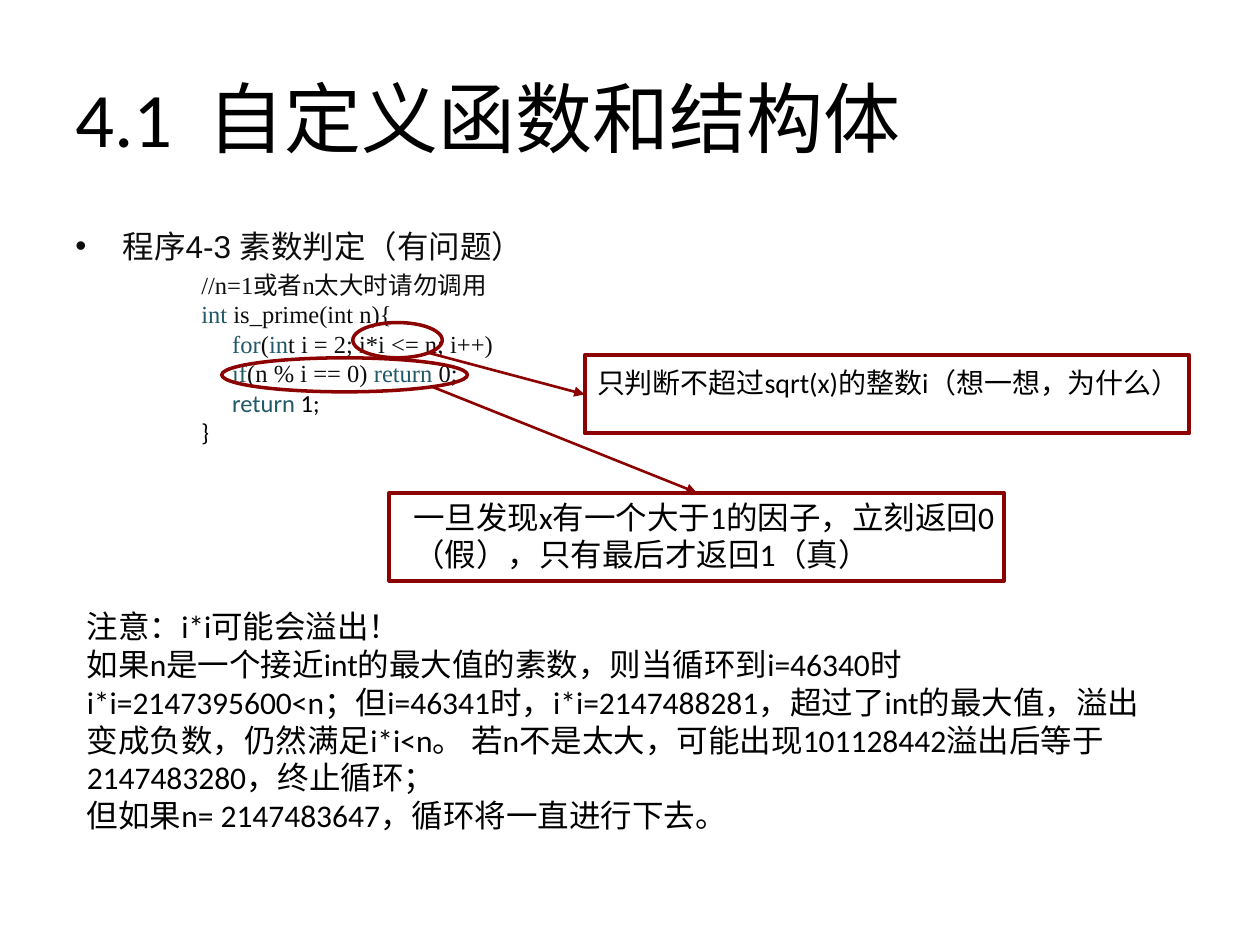
from typing import NamedTuple, Optional

from lxml.etree import SubElement
from pptx import Presentation
from pptx.dml.color import RGBColor
from pptx.enum.shapes import MSO_CONNECTOR as Conn, MSO_SHAPE as Shape
from pptx.enum.text import MSO_ANCHOR as Anchor
from pptx.oxml.ns import qn
from pptx.util import Inches, Pt

BLACK = RGBColor(0x00, 0x00, 0x00)
INK = RGBColor(0x0D, 0x0D, 0x0D)
KEYWORD = RGBColor(0x21, 0x59, 0x68)
RED = RGBColor(0x8C, 0x02, 0x02)

# Grid of 100 columns by 75 rows
UNIT = Inches(10) // 100

SANS, SERIF = "Calibri", "Times New Roman"
TITLE = {"size": Pt(44), "name": SANS}
HEADING = {"size": Pt(18), "name": "Arial"}
CODE = {"size": Pt(14), "name": SERIF}
BODY = {"size": Pt(18), "name": SANS}
REMARK = {"size": Pt(16), "name": SANS}


class Box(NamedTuple):
    col: float
    row: float
    cols: float
    rows: float


class Run(NamedTuple):
    text: str
    color: RGBColor = BLACK
    font: Optional[str] = None


class Para(NamedTuple):
    runs: list[Run]
    style: dict
    indent: float = 0
    format: dict = {}
    bullet: Optional[str] = None


class Callout(NamedTuple):
    ring: Box
    start: tuple[float, float]
    end: tuple[float, float]
    frame: Box
    label: Box
    text: str
    style: dict


def grid(*values: float) -> list[int]:
    return [round(v * UNIT) for v in values]


def set_all(target, values: dict) -> None:
    for name, value in values.items():
        setattr(target, name, value)


def add_text(slide, box: Box, paras: list[Para], anchor=Anchor.TOP) -> None:
    tf = slide.shapes.add_textbox(*grid(*box)).text_frame
    set_all(tf, {"word_wrap": True, "vertical_anchor": anchor})
    for i, para in enumerate(paras):
        p = tf.add_paragraph() if i else tf.paragraphs[0]
        set_all(p, para.format)
        pPr = p._p.get_or_add_pPr()
        left = grid(para.indent)[0]
        pPr.set("marL", str(left))
        if para.bullet:
            pPr.set("indent", str(-left))
            SubElement(pPr, qn("a:buFont"), typeface="Arial")
            SubElement(pPr, qn("a:buChar"), char=para.bullet)
        for run in para.runs:
            r = p.add_run()
            r.text = run.text
            set_all(r.font, para.style)
            r.font.color.rgb = run.color
            if run.font:
                r.font.name = run.font


def add_outline(slide, kind: Shape, box: Box, width: float) -> None:
    sp = slide.shapes.add_shape(kind, *grid(*box))
    sp.shadow.inherit = False
    sp.fill.background()
    sp.line.color.rgb = RED
    sp.line.width = Pt(width)


def add_arrow(slide, start: tuple, end: tuple) -> None:
    cx = slide.shapes.add_connector(Conn.STRAIGHT, *grid(*start, *end))
    cx.line.color.rgb = RED
    cx.line.width = Pt(1.5)
    SubElement(cx.line._get_or_add_ln(), qn("a:tailEnd"), type="triangle")
    SubElement(cx._element.spPr, qn("a:effectLst"))


def add_callout(slide, c: Callout) -> None:
    add_outline(slide, Shape.OVAL, c.ring, 2)
    add_arrow(slide, c.start, c.end)
    add_outline(slide, Shape.RECTANGLE, c.frame, 2.25)
    add_text(slide, c.label, [Para([Run(c.text)], c.style)])


def code_line(depth: int, *runs: Run, before: float = 0) -> Para:
    spacing = {"line_spacing": Pt(16.9), "space_before": Pt(before)}
    return Para(list(runs), CODE, 10 + 2.45 * depth, spacing)


PROGRAM = [
    Para([Run("程序4-3 素数判定（有问题）", INK)], HEADING, 3.75,
         {"space_before": Pt(3.6)}, "•"),
    code_line(0, Run("//n=1或者n太大时请勿调用", INK), before=2.8),
    code_line(0, Run("int ", KEYWORD), Run("is_prime(int n){", INK)),
    code_line(1, Run("for", KEYWORD), Run("(", INK), Run("in", KEYWORD),
              Run("t i = 2; i*i <= n; i++)", INK)),
    code_line(1, Run("if", KEYWORD), Run("(n % i == 0) ", INK),
              Run("return", KEYWORD), Run(" 0;", INK)),
    code_line(1, Run("return ", KEYWORD, SANS), Run("1;", BLACK, SANS)),
    code_line(0, Run("}", BLACK, SANS)),
]

CALLOUTS = [
    Callout(Box(28, 25.6, 7.1, 2.8), (34, 28), (46.4, 31.3),
            Box(46.4, 28.2, 48, 6.2), Box(46.4, 28.5, 50, 6.7),
            "只判断不超过sqrt(x)的整数i（想一想，为什么）", REMARK),
    Callout(Box(17.6, 28.4, 19.5, 2.7), (34.3, 30.7), (55.3, 39.1),
            Box(30.9, 39.1, 48.8, 7), Box(31.8, 39, 50, 10.1),
            "一旦发现x有一个大于1的因子，立刻返回0（假），只有最后才返回1（真）", BODY),
]

NOTES = [
    "注意：i*i可能会溢出！",
    "如果n是一个接近int的最大值的素数，则当循环到i=46340时"
    "i*i=2147395600<n；但i=46341时，i*i=2147488281，超过了int的最大值，"
    "溢出变成负数，仍然满足i*i<n。 若n不是太大，可能出现101128442"
    "溢出后等于2147483280，终止循环；",
    "但如果n= 2147483647，循环将一直进行下去。",
]


def main() -> None:
    prs = Presentation()
    set_all(prs, {"slide_width": 100 * UNIT, "slide_height": 75 * UNIT})
    slide = prs.slides.add_slide(prs.slide_layouts[6])

    # Program listing and title
    add_text(slide, Box(5, 17.5, 90, 49.5), PROGRAM)
    add_text(slide, Box(5, 3, 90, 12.5),
             [Para([Run("4.1  自定义函数和结构体")], TITLE)], Anchor.MIDDLE)

    # Ringed code with arrows to the remarks
    for callout in CALLOUTS:
        add_callout(slide, callout)

    # Overflow warning
    add_text(slide, Box(5.9, 47.7, 87.8, 19.2),
             [Para([Run(text)], BODY) for text in NOTES])

    prs.save("out.pptx")


if __name__ == "__main__":
    main()
